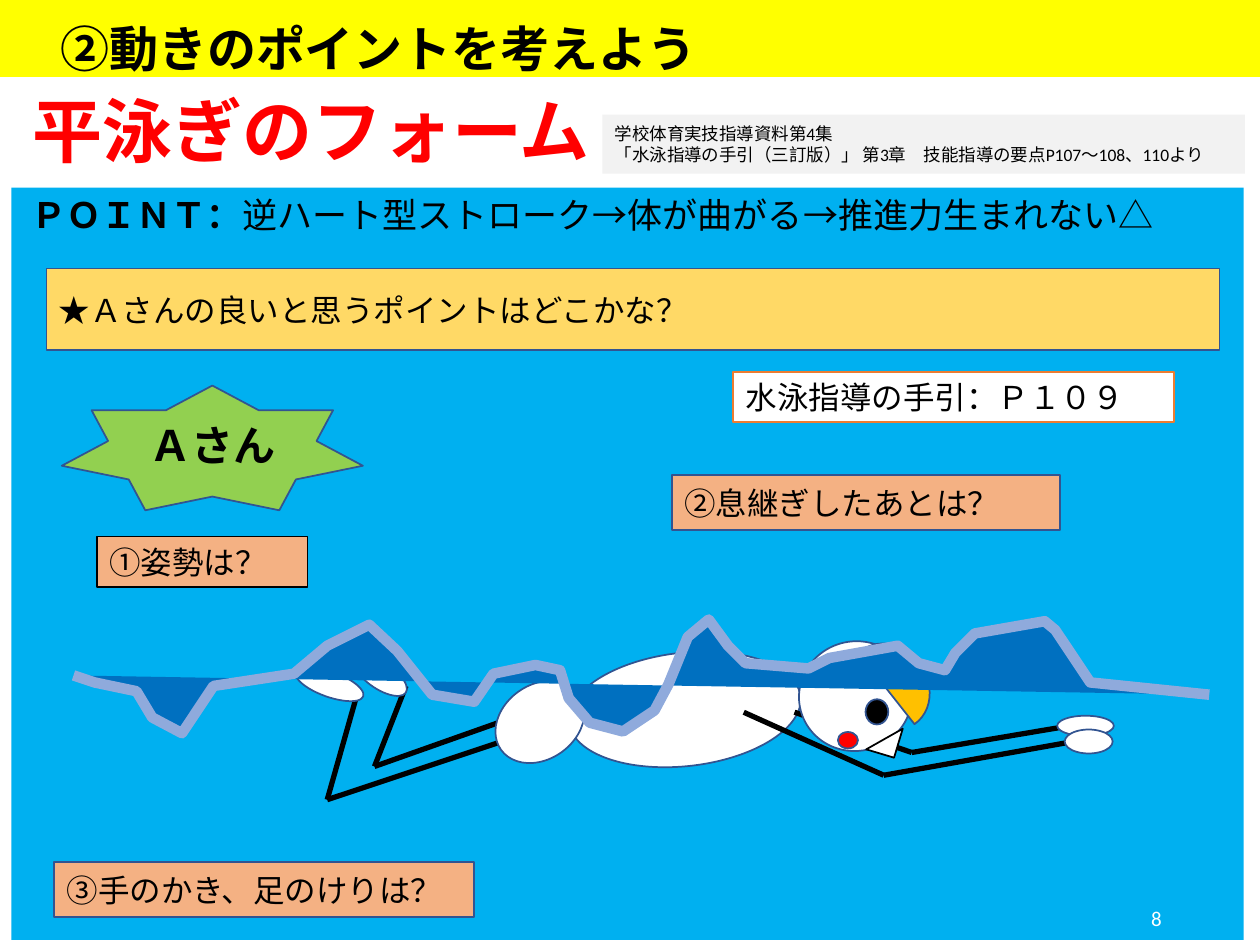
from lxml.etree import SubElement
from pptx import Presentation
from pptx.dml.color import RGBColor
from pptx.enum.shapes import MSO_CONNECTOR as Connector, MSO_SHAPE as Shape
from pptx.enum.text import MSO_ANCHOR as Anchor, PP_ALIGN as Align
from pptx.oxml.ns import qn
from pptx.util import Pt

COLORS = {
    "black": "000000", "white": "FFFFFF", "red": "FF0000", "yellow": "FFFF00",
    "water": "00B0F0", "deep": "0070C0", "foam": "8FAADC", "outline": "325491",
    "peach": "F4B183", "sand": "FFD966", "green": "92D050", "cap": "FFC000",
    "gray": "F2F2F2", "orange": "ED7D31",
}
WAVE = [
    (691, 109), (623, 102), (603, 72), (597, 67), (557, 74), (546, 85),
    (540, 95), (525, 91), (513, 81), (474, 88), (462, 94), (426, 91),
    (416, 81), (405, 66), (393, 76), (382, 103), (374, 118), (356, 130),
    (337, 125), (325, 111), (320, 95), (306, 92), (282, 97), (271, 113),
    (247, 109), (227, 84), (211, 69), (187, 81), (168, 97), (122, 104),
    (104, 131), (87, 122), (78, 107), (54, 102), (42, 98),
]


def color(name):
    return RGBColor.from_string(COLORS[name])


def style(shape, fill, line=None, width=1):
    shape.shadow.inherit = False
    shape.fill.solid()
    shape.fill.fore_color.rgb = color(fill)
    if line:
        shape.line.color.rgb = color(line)
        shape.line.width = Pt(width)
    else:
        shape.line.fill.background()


def add_shape(slide, kind, box, place, fill, line=None, width=1, rotation=0):
    left, top, *size = place
    position = (box[0] + left, box[1] + top, *size)
    shape = slide.shapes.add_shape(kind, *map(Pt, position))
    style(shape, fill, line, width)
    shape.rotation = rotation
    return shape


def add_textbox(slide, box, place):
    left, top, *size = place
    return slide.shapes.add_textbox(*map(Pt, (box[0] + left, box[1] + top, *size)))


def format_run(run, size, font, ink, bold):
    run.font.size = Pt(size)
    run.font.name = font
    run.font.bold = bold
    run.font.color.rgb = color(ink)


def write(shape, text, size, font="Arial", ink="black", bold=False,
          align=Align.LEFT, anchor=Anchor.MIDDLE):
    frame = shape.text_frame
    frame.word_wrap = True
    frame.vertical_anchor = anchor
    frame.text = text
    for paragraph in frame.paragraphs:
        paragraph.alignment = align
        for run in paragraph.runs:
            format_run(run, size, font, ink, bold)


def add_header(slide, box):
    add_shape(slide, Shape.RECTANGLE, box, (-1.4, 0, 721.4, 43.9), "yellow")
    form = add_shape(slide, Shape.RECTANGLE, box, (11.5, 48.2, 344.9, 51.1), "white")
    write(form, "平泳ぎのフォーム", 40, ink="red", bold=True)
    title = add_textbox(slide, box, (27.4, 4.3, 643, 46.1))
    write(title, "②動きのポイントを考えよう", 28, "Calibri", bold=True)
    source = add_shape(slide, Shape.RECTANGLE, box, (344.2, 65.5, 367.2, 33.8), "gray")
    write(source, "学校体育実技指導資料第4集\n"
          "「水泳指導の手引（三訂版）」 第3章　技能指導の要点P107～108、110より", 10, "Calibri")


def add_panel(slide, box):
    add_shape(slide, Shape.RECTANGLE, box, (0, 0, *box[2:]), "water")
    point = add_textbox(slide, box, (10.1, 0, 673.2, 46.1))
    point.text_frame.margin_left = point.text_frame.margin_right = Pt(1.5)
    write(point, "ＰＯＩＮＴ：", 20, bold=True, anchor=Anchor.TOP)
    detail = point.text_frame.paragraphs[0].add_run()
    detail.text = "逆ハート型ストローク→体が曲がる→推進力生まれない△"
    format_run(detail, 20, "Arial", "black", False)

    labels = [
        ((20.1, 46.1, 670.3, 46.8), "sand", "outline", 1, "Arial",
         "★Ａさんの良いと思うポイントはどこかな？"),
        ((412.5, 105.1, 252, 28.8), "white", "orange", 1, "Calibri", "水泳指導の手引：Ｐ１０９"),
        ((48.9, 199.4, 120.2, 28.8), "peach", "black", 0.75, "Arial", "①姿勢は？"),
        ((377.3, 164.1, 221.8, 31.7), "peach", "outline", 1, "Arial", "②息継ぎしたあとは？"),
        ((24.5, 385.2, 239.8, 31.7), "peach", "outline", 1, "Calibri", "③手のかき、足のけりは？"),
    ]
    for place, fill, line, width, font, text in labels:
        label = add_shape(slide, Shape.RECTANGLE, box, place, fill, line, width)
        write(label, text, 18, font)

    star = add_shape(slide, Shape.STAR_7_POINT, box, (28.8, 113, 172.1, 71.3),
                     "green", "outline")
    write(star, "Ａさん", 24, "Calibri", bold=True, align=Align.CENTER)
    number = add_textbox(slide, box, (502.5, 403.2, 162, 28.8))
    write(number, "8", 12, "Calibri", "white", align=Align.RIGHT)


def add_limb(slide, box, start, end):
    ends = [Pt(origin + offset) for x_y in (start, end)
            for origin, offset in zip(box, x_y)]
    limb = slide.shapes.add_connector(Connector.STRAIGHT, *ends)
    limb.line.color.rgb = color("black")
    limb.line.width = Pt(3)
    SubElement(limb._element.spPr, qn("a:effectLst"))


def add_wave(slide, box):
    start, *rest = [(Pt(box[0] + x), Pt(box[1] + y)) for x, y in WAVE]
    builder = slide.shapes.build_freeform(*start)
    builder.add_line_segments(rest, close=False)
    style(builder.convert_to_shape(), "deep", "foam", 6)


def add_swimmer(slide, box):
    def part(kind, place, fill="white", rotation=0, line="outline"):
        return add_shape(slide, kind, box, place, fill, line, rotation=rotation)

    part(Shape.OVAL, (324.7, 85, 133.2, 64.8), rotation=353.6)
    limbs = [
        [(204, 109), (187, 169), (319, 125)],
        [(232, 104), (214, 150), (296, 121)],
        [(454, 119), (521, 142), (610, 127)],
        [(425, 119), (505, 155), (612, 136)],
    ]
    for start, joint, end in limbs:
        add_limb(slide, box, start, joint)
        add_limb(slide, box, joint, end)

    part(Shape.OVAL, (456.5, 78.5, 64.8, 62.6), rotation=344.2)
    part(Shape.RIGHT_TRIANGLE, (496.8, 126, 17.3, 16.6), rotation=286.7, line="black")
    part(Shape.OVAL, (478.8, 130.3, 11.5, 9.4), "red")
    part(Shape.OVAL, (494.6, 111.6, 13, 14.4), "black")
    cap = part(Shape.CHORD, (486, 78.5, 43.9, 51.8), "cap", 145.7)
    cap.adjustments[0], cap.adjustments[1] = 49.25, 162

    ovals = [
        ((604.1, 121, 32.4, 11.5), 0), ((608.4, 128.9, 27.4, 13.7), 0),
        ((200.2, 90.7, 34.6, 15.1), 33.6), ((167.8, 95.8, 41, 14.4), 19.8),
        ((287.3, 97.2, 42.5, 54.7), 54.3),
    ]
    for place, rotation in ovals:
        part(Shape.OVAL, place, rotation=rotation)
    add_wave(slide, box)


def main():
    presentation = Presentation()
    presentation.slide_width, presentation.slide_height = Pt(720), Pt(540)
    slide = presentation.slides.add_slide(presentation.slide_layouts[6])
    add_panel(slide, (6.5, 107.3, 704.2, 429.8))
    add_swimmer(slide, (0, 288, 720, 180))
    add_header(slide, (0, 0, 720, 100))
    presentation.save("out.pptx")


if __name__ == "__main__":
    main()
